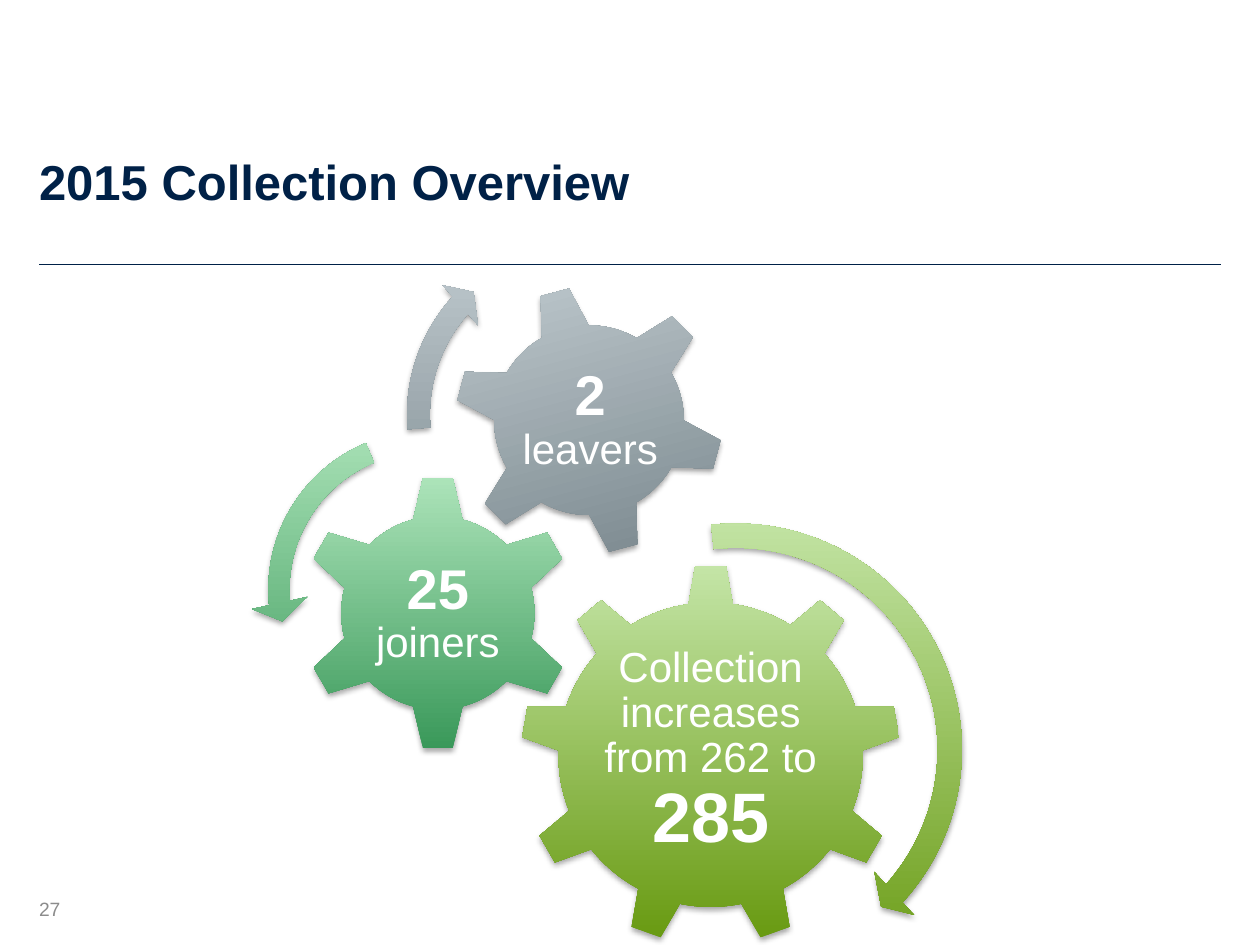
import pptx
import pptx.util
import pptx.dml.color
import pptx.enum.shapes
import pptx.enum.text
import pptx.oxml
from pptx.oxml.ns import nsdecls, qn

Inches = pptx.util.Inches
Pt = pptx.util.Pt
SHAPE = pptx.enum.shapes.MSO_SHAPE
ANCHOR = pptx.enum.text.MSO_ANCHOR
NAVY, GREY, WHITE = "002147", "8C8C8C", "FFFFFF"
LIME = ("67990F", "C4E5A7")
GREEN = ("399859", "ADE4BA")
SLATE = ("738187", "C4CED3")


def rgb(value):
    return pptx.dml.color.RGBColor.from_string(value)


def add_text(slide, box, runs, color, anchor, margins):
    label = slide.shapes.add_textbox(*map(Inches, box))
    frame = label.text_frame
    frame.word_wrap = True
    frame.vertical_anchor = anchor
    frame.margin_left, frame.margin_top, frame.margin_right, frame.margin_bottom = map(Inches, margins)
    paragraph = frame.paragraphs[0]
    paragraph.font.name = "Arial"
    paragraph.font.color.rgb = rgb(color)
    for text, size, bold in runs:
        run = paragraph.add_run()
        run.text = text
        run.font.size = Pt(size)
        run.font.bold = bold
    return paragraph


def add_gear_text(slide, box, runs, margin):
    paragraph = add_text(slide, box, runs, WHITE, ANCHOR.MIDDLE, [margin] * 4)
    paragraph.alignment = pptx.enum.text.PP_ALIGN.CENTER
    paragraph.line_spacing = 0.9
    paragraph.space_after = Pt(0)
    spacing = paragraph._p.pPr.find(qn("a:spcAft"))
    spacing.clear()
    spacing.append(pptx.oxml.parse_xml(f'<a:spcPct {nsdecls("a")} val="35000"/>'))


def add_shaded_shape(slide, preset, left, top, size, colors, rotation=0, adjustments=()):
    part = slide.shapes.add_shape(preset, Inches(left), Inches(top), Inches(size), Inches(size))
    part.rotation = rotation
    for index, value in enumerate(adjustments):
        part.adjustments[index] = value
    part.fill.gradient()
    part.fill.gradient_angle = 90
    for stop, position, color in zip(part.fill.gradient_stops, (0, 1), colors):
        stop.position = position
        stop.color.rgb = rgb(color)
    part.line.fill.background()
    part.shadow.inherit = False
    effects = part._element.spPr.find(qn("a:effectLst"))
    effects.append(pptx.oxml.parse_xml(
        f'<a:outerShdw {nsdecls("a")} blurRad="{Pt(3.1)}" dist="{Pt(1.8)}" dir="5400000" rotWithShape="0">'
        '<a:srgbClr val="000000"><a:alpha val="35000"/></a:srgbClr></a:outerShdw>'))


def add_rule(slide, left, right, y):
    rule = slide.shapes.add_connector(
        pptx.enum.shapes.MSO_CONNECTOR.STRAIGHT, Inches(left), Inches(y), Inches(right), Inches(y))
    rule.line.color.rgb = rgb(NAVY)
    rule.line.width = Pt(0.6)
    rule._element.spPr.append(pptx.oxml.parse_xml(f'<a:effectLst {nsdecls("a")}/>'))


def main():
    deck = pptx.Presentation()
    deck.slide_width, deck.slide_height = Inches(10), Inches(7.5)
    slide = deck.slides.add_slide(deck.slide_layouts[6])

    add_rule(slide, 0.31, 9.69, 2.1)
    header_margins = (0, 0.05, 0, 0)
    add_text(slide, (0.31, 0.28, 6.62, 1.39), [("2015 Collection Overview", 28, True)],
             NAVY, ANCHOR.BOTTOM, header_margins)
    add_text(slide, (0.31, 6.99, 0.38, 0.39), [("27", 11, False)],
             GREY, ANCHOR.MIDDLE, header_margins)

    add_shaded_shape(slide, SHAPE.GEAR_9, 4.13, 4.48, 3.02, LIME)
    add_gear_text(slide, (4.74, 5.19, 1.8, 1.55),
                  [("Collection increases from 262 to ", 24, False), ("285", 40, True)], 0.03)
    add_shaded_shape(slide, SHAPE.GEAR_6, 2.38, 3.77, 2.19, GREEN)
    add_gear_text(slide, (2.93, 4.33, 1.09, 1.08),
                  [("25", 32, True), (" joiners ", 24, False)], 0.04)
    add_shaded_shape(slide, SHAPE.GEAR_6, 3.6, 2.26, 2.15, SLATE, rotation=345)
    add_gear_text(slide, (4.08, 2.73, 1.21, 1.21),
                  [("2", 32, True), (" leavers ", 24, False)], 0.04)

    add_shaded_shape(slide, SHAPE.CIRCULAR_ARROW, 3.91, 4.02, 3.86, LIME,
                     adjustments=(0.05, 2.99, 25.33, 158.26, 0.06))
    add_shaded_shape(slide, SHAPE.LEFT_CIRCULAR_ARROW, 1.99, 3.28, 2.8, GREEN,
                     adjustments=(0.06, 4.3, 104.89, 148.38, 0.08))
    add_shaded_shape(slide, SHAPE.CIRCULAR_ARROW, 3.11, 1.78, 3.02, SLATE,
                     adjustments=(0.06, 3.94, 133.14, 105.08, 0.07))
    deck.save("out.pptx")


if __name__ == "__main__":
    main()
